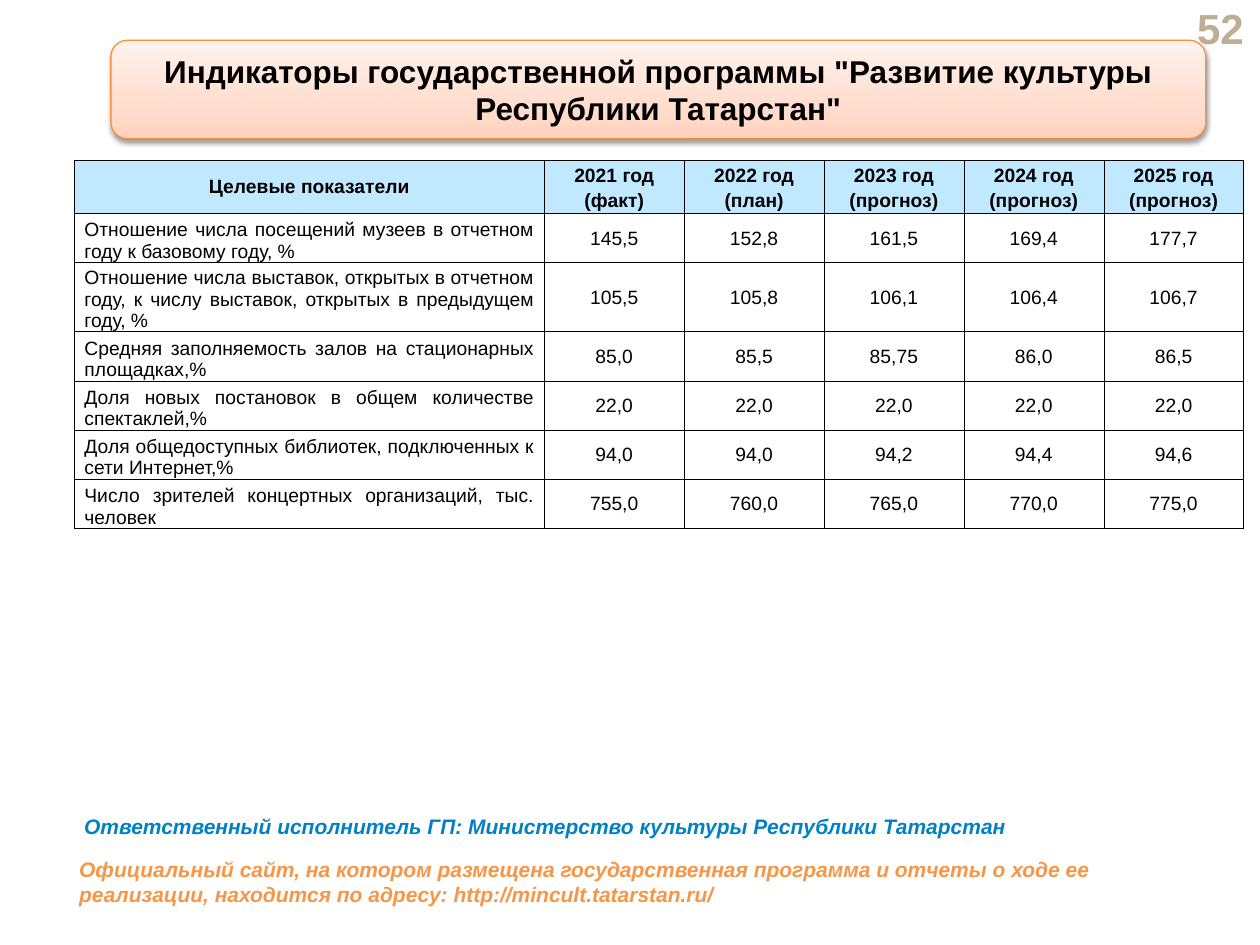
from lxml import etree
from pptx import Presentation, util as u
from pptx.dml.color import RGBColor
from pptx.enum import shapes, text
from pptx.oxml import parse_xml
from pptx.oxml.ns import nsdecls

THEME = {
    "font": "Arial",
    "text": "000000", "number": "BFAE96", "header_fill": "C0E9FF",
    "executor": "0081C5", "site": "F79646", "title_line": "F69240",
    "title_gradient": [(0, "FFD2BD"), (35, "FFDED0"), (100, "FFF2ED")],
    "number_size": 24, "title_size": 18, "table_size": 11, "note_size": 12,
}

PAGE_NUMBER = "52"
TITLE = 'Индикаторы государственной программы "Развитие культуры Республики Татарстан"'
HEADER = ["Целевые показатели", "2021 год\n(факт)", "2022 год\n(план)",
          "2023 год\n(прогноз)", "2024 год\n(прогноз)", "2025 год (прогноз)"]
INDICATORS = [
    ("Отношение числа посещений музеев в отчетном году к базовому году, %",
     "145,5", "152,8", "161,5", "169,4", "177,7"),
    ("Отношение числа выставок, открытых в отчетном году, к числу выставок, "
     "открытых в предыдущем году, %",
     "105,5", "105,8", "106,1", "106,4", "106,7"),
    ("Средняя заполняемость залов на стационарных площадках,%",
     "85,0", "85,5", "85,75", "86,0", "86,5"),
    ("Доля новых постановок в общем количестве спектаклей,%",
     "22,0", "22,0", "22,0", "22,0", "22,0"),
    ("Доля общедоступных библиотек, подключенных к сети Интернет,%",
     "94,0", "94,0", "94,2", "94,4", "94,6"),
    ("Число зрителей концертных организаций, тыс. человек",
     "755,0", "760,0", "765,0", "770,0", "775,0"),
]
EXECUTOR = "Ответственный исполнитель ГП: Министерство культуры Республики Татарстан"
SITE = ("Официальный сайт, на котором размещена государственная программа и отчеты о ходе ее "
        "реализации, находится по адресу: http://mincult.tatarstan.ru/")

NAME_WIDTH, YEAR_WIDTH, ROW_HEIGHT = 3.73, 1.11, 0.39
NAME_INSETS = (0.08, 0, 0.08, 0)
YEAR_INSETS = (0.07, 0, 0.07, 0)
VALUE_INSETS = (0.01, 0.01, 0.01, 0)


def write(frame, content, size, color, align, bold=False, italic=False, spacing=None):
    frame.text = content
    for paragraph in frame.paragraphs:
        paragraph.alignment = align
        if spacing:
            paragraph.line_spacing = spacing
        for run in paragraph.runs:
            font = run.font
            font.name, font.size = THEME["font"], u.Pt(size)
            font.bold, font.italic = bold, italic
            font.color.rgb = RGBColor.from_string(color)


def add_text(slide, box, content, size, color, align=text.PP_ALIGN.LEFT, italic=False):
    frame = slide.shapes.add_textbox(*map(u.Inches, box)).text_frame
    frame.word_wrap = True
    write(frame, content, size, color, align, bold=True, italic=italic)
    return frame


def add_title(slide):
    shape = slide.shapes.add_shape(shapes.MSO_SHAPE.ROUNDED_RECTANGLE,
                                   *map(u.Inches, (0.88, 0.32, 8.69, 0.78)))
    shape.line.color.rgb = RGBColor.from_string(THEME["title_line"])
    shape.line.width = u.Pt(0.75)
    stops = "".join(f'<a:gs pos="{position * 1000}"><a:srgbClr val="{color}"/></a:gs>'
                    for position, color in THEME["title_gradient"])
    properties = shape._element.spPr
    properties.insert(2, parse_xml(
        f'<a:gradFill {nsdecls("a")} rotWithShape="1"><a:gsLst>{stops}</a:gsLst>'
        '<a:lin ang="16200000" scaled="0"/></a:gradFill>'))
    properties.append(parse_xml(
        f'<a:effectLst {nsdecls("a")}><a:outerShdw blurRad="{u.Pt(3.1)}" dist="{u.Pt(1.6)}" '
        'dir="5400000" rotWithShape="0"><a:srgbClr val="000000"><a:alpha val="38000"/>'
        '</a:srgbClr></a:outerShdw></a:effectLst>'))
    frame = shape.text_frame
    frame.word_wrap = True
    frame.vertical_anchor = text.MSO_ANCHOR.MIDDLE
    write(frame, TITLE, THEME["title_size"], THEME["text"], text.PP_ALIGN.CENTER, bold=True)


def add_borders(cell):
    properties = cell._tc.get_or_add_tcPr()
    for side in ("lnL", "lnR", "lnT", "lnB"):
        properties.append(parse_xml(
            f'<a:{side} {nsdecls("a")} w="{u.Pt(0.25)}"><a:solidFill>'
            f'<a:srgbClr val="{THEME["text"]}"/></a:solidFill></a:{side}>'))


def fill_cell(cell, content, is_header, is_name):
    add_borders(cell)
    if is_header:
        cell.fill.solid()
        cell.fill.fore_color.rgb = RGBColor.from_string(THEME["header_fill"])
    else:
        cell.fill.background()
    insets = VALUE_INSETS
    if is_header and not is_name:
        insets = YEAR_INSETS
    elif is_name and not is_header:
        insets = NAME_INSETS
    (cell.margin_left, cell.margin_top,
     cell.margin_right, cell.margin_bottom) = map(u.Inches, insets)
    body_name = is_name and not is_header
    cell.vertical_anchor = text.MSO_ANCHOR.BOTTOM if body_name else text.MSO_ANCHOR.MIDDLE
    write(cell.text_frame, content, THEME["table_size"], THEME["text"],
          text.PP_ALIGN.JUSTIFY if body_name else text.PP_ALIGN.CENTER,
          bold=is_header, spacing=1.15 if is_header and not is_name else None)


def add_indicator_table(slide):
    rows = [HEADER, *INDICATORS]
    widths = [NAME_WIDTH] + [YEAR_WIDTH] * (len(HEADER) - 1)
    table = slide.shapes.add_table(
        len(rows), len(widths), u.Inches(0.59), u.Inches(1.27),
        u.Inches(sum(widths)), u.Inches(ROW_HEIGHT * len(rows))).table
    table.first_row = table.horz_banding = False
    for column, width in zip(table.columns, widths):
        column.width = u.Inches(width)
    for row_index, row in enumerate(rows):
        table.rows[row_index].height = u.Inches(ROW_HEIGHT)
        for column_index, content in enumerate(row):
            fill_cell(table.cell(row_index, column_index), content,
                      row_index == 0, column_index == 0)


def main():
    presentation = Presentation()
    presentation.slide_width, presentation.slide_height = u.Inches(10), u.Inches(7.5)
    slide = presentation.slides.add_slide(presentation.slide_layouts[6])
    number = add_text(slide, (9.11, 0.05, 0.86, 0.34), PAGE_NUMBER, THEME["number_size"],
                      THEME["number"], text.PP_ALIGN.RIGHT)
    number.vertical_anchor = text.MSO_ANCHOR.MIDDLE
    add_title(slide)
    add_indicator_table(slide)
    add_text(slide, (0.57, 6.41, 9.33, 0.3), EXECUTOR, THEME["note_size"],
             THEME["executor"], italic=True)
    add_text(slide, (0.53, 6.75, 8.75, 0.5), SITE, THEME["note_size"],
             THEME["site"], italic=True)
    presentation.save("out.pptx")


if __name__ == "__main__":
    main()
